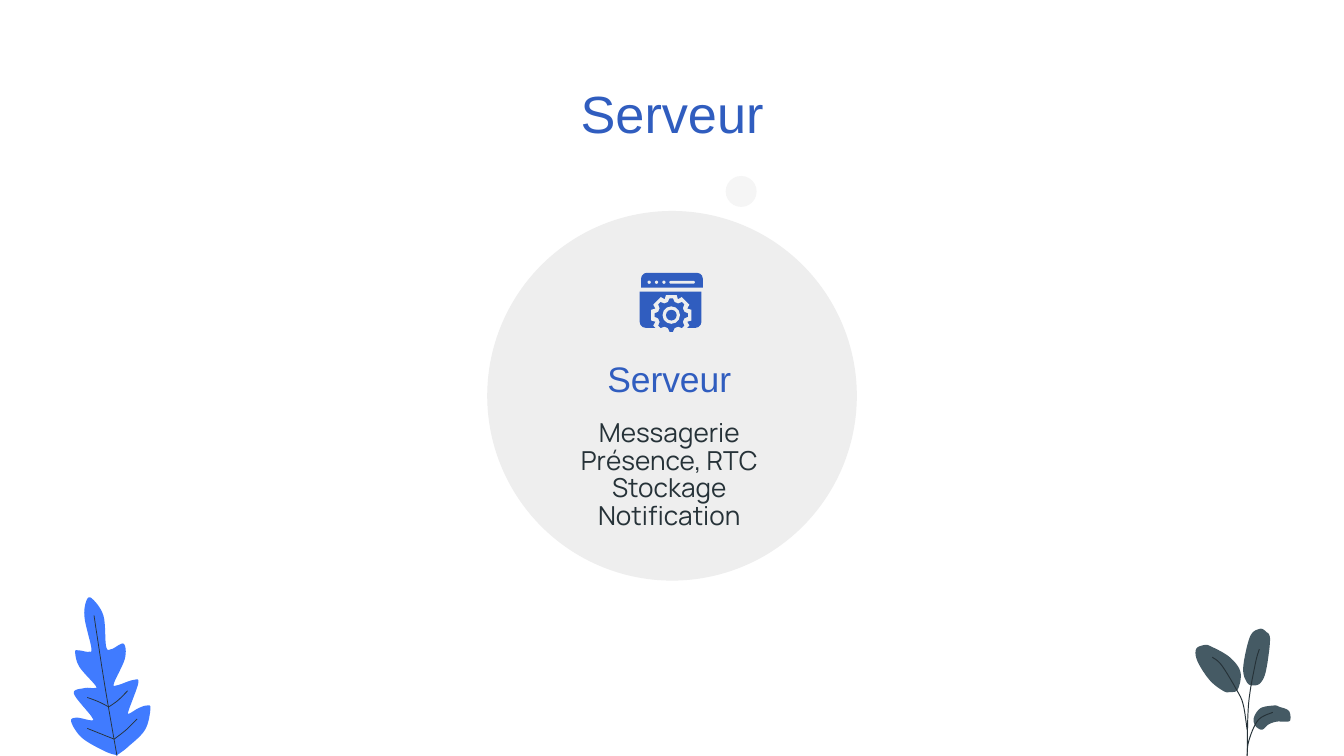
from math import cos, sin, tau

from pptx import Presentation
from pptx.dml.color import RGBColor
from pptx.enum.shapes import MSO_SHAPE
from pptx.enum.text import MSO_ANCHOR, PP_ALIGN
from pptx.util import Inches, Pt

WHITE = RGBColor(0xFF, 0xFF, 0xFF)
BLUE = RGBColor(0x30, 0x5D, 0xBF)
LEAF = RGBColor(0x40, 0x7B, 0xFF)
SLATE = RGBColor(0x45, 0x5A, 0x64)
DARK = RGBColor(0x26, 0x32, 0x38)
GREY = RGBColor(0xEE, 0xEE, 0xEE)
PALE = RGBColor(0xF5, 0xF5, 0xF5)

TITLE = {"name": "Arial", "size": Pt(28)}
HEAD = {"name": "Arial", "size": Pt(19)}
BODY = {"name": "Manrope", "size": Pt(14)}

OAK = [
    (6.8, 44.5), (7.7, 45.8), (7.9, 48.1), (8.3, 48.3), (9.2, 47.9), (9.3, 49),
    (8.5, 50.8), (8.7, 51), (9.9, 50.6), (10.3, 50.8), (9.6, 52.8), (9.6, 53.1),
    (10.3, 52.7), (10.9, 52.5), (11.2, 52.7), (10.8, 54.3), (9.5, 55.6),
    (8.7, 56.2), (8.7, 56.2), (7.8, 55.9), (6.1, 54.9), (5.3, 53.7), (5.7, 53.4),
    (6.8, 53.6), (6.8, 53.3), (5.5, 51.6), (6.3, 51.2), (7, 51.2), (7.1, 51),
    (5.9, 49.6), (5.6, 48.5), (5.9, 48.4), (6.6, 48.5), (6.8, 48.2), (6.3, 46),
    (6.4, 44.8),
]
BUDS = [
    [(94.8, 52.5), (93.8, 52.7), (93.3, 53.4), (93.4, 54), (93.9, 54.3),
     (94.4, 53.9), (95, 53.7), (95.6, 53.7), (96, 53.6), (95.9, 52.9), (95.2, 52.6)],
    [(93.7, 46.8), (93, 47.4), (92.5, 49.7), (92.8, 50.8), (93.3, 51),
     (93.8, 50.8), (94.2, 49.9), (94.5, 47.6), (94.2, 47)],
    [(89.6, 48), (89, 48.3), (89.1, 49.2), (90, 50.6), (91, 51.4), (91.5, 51.5),
     (92.1, 51.3), (92.3, 50), (91.5, 48.9), (90.1, 48.1)],
]
VEINS = [
    [(7, 45.8), (7.8, 51), (8.7, 56.2)],
    [(9.5, 51.4), (8.8, 52.1), (8.1, 52.6)],
    [(6.5, 51.9), (7.3, 52.2), (8.1, 52.6)],
    [(6.5, 54.2), (7.5, 54.6), (8.5, 55)],
    [(10.2, 53.5), (9.4, 54.3), (8.5, 55)],
]
STEMS = [
    [(94.7, 53), (93.6, 53.6), (92.9, 55.2), (92.8, 56.5)],
    [(93.7, 48.3), (93.4, 49.4), (92.9, 52.4), (92.8, 56.2)],
    [(90.2, 48.9), (90.9, 49.5), (92, 51.3), (92.5, 52.4), (92.8, 54.3)],
]


def smooth(pts, loop):
    """Return points of a soft curve through the given knots."""
    n = len(pts)
    spans = n if loop else n - 1

    def knot(i):
        return pts[i % n if loop else min(max(i, 0), n - 1)]

    def mix(a, b, c, d, t):
        return b + t / 2 * (c - a + t * (2*a - 5*b + 4*c - d + t * (3*b - 3*c + d - a)))

    return [
        tuple(mix(*axis, step / 8) for axis in zip(*(knot(i + k) for k in (-1, 0, 1, 2))))
        for i in range(spans) for step in range(8)
    ] + ([] if loop else [pts[-1]])


def cog(x, y, tip, root, half):
    """Return the outline of a gear with eight teeth."""
    rim = ((root, -half - 0.15), (tip, -half), (tip, half), (root, half + 0.15))
    return [
        (x + r * cos(k * tau / 8 + a), y + r * sin(k * tau / 8 + a))
        for k in range(8) for r, a in rim
    ]


class Sheet:
    """Draw on one slide with a grid of 100 columns of square cells."""

    def __init__(self):
        self.deck = Presentation()
        self.deck.slide_width = Inches(10)
        self.deck.slide_height = Inches(10) * 9 // 16
        self.cell = self.deck.slide_width // 100
        self.slide = self.deck.slides.add_slide(self.deck.slide_layouts[6])
        self.slide.background.fill.solid()
        self.slide.background.fill.fore_color.rgb = WHITE

    def grid(self, *cells):
        return [round(c * self.cell) for c in cells]

    def paint(self, shape, tint):
        shape.shadow.inherit = False
        shape.fill.solid()
        shape.fill.fore_color.rgb = tint
        shape.line.fill.background()

    def form(self, kind, box, tint, *bends):
        shape = self.slide.shapes.add_shape(kind, *self.grid(*box))
        self.paint(shape, tint)
        for i, bend in enumerate(bends):
            shape.adjustments[i] = bend

    def disc(self, x, y, r, tint):
        self.form(MSO_SHAPE.OVAL, (x - r, y - r, 2 * r, 2 * r), tint)

    def trace(self, pts, loop):
        first, *rest = [self.grid(*p) for p in pts]
        pen = self.slide.shapes.build_freeform(*first)
        pen.add_line_segments(rest, close=loop)
        return pen.convert_to_shape()

    def patch(self, pts, tint):
        self.paint(self.trace(pts, True), tint)

    def stroke(self, pts, tint, width):
        shape = self.trace(smooth(pts, False), False)
        shape.shadow.inherit = False
        shape.fill.background()
        shape.line.color.rgb = tint
        shape.line.width = Pt(width)

    def text(self, words, box, style, tint, anchor, space):
        frame = self.slide.shapes.add_textbox(*self.grid(*box)).text_frame
        form = {"word_wrap": True, "vertical_anchor": anchor, "text": words}
        edges = ("left", "top", "right", "bottom")
        form |= {f"margin_{edge}": Inches(0.1) for edge in edges}
        for key, val in form.items():
            setattr(frame, key, val)
        for para in frame.paragraphs:
            para.alignment = PP_ALIGN.CENTER
            para.line_spacing = space
            font = para.runs[0].font
            font.color.rgb = tint
            for key, val in style.items():
                setattr(font, key, val)


def main():
    sheet = Sheet()
    sheet.text("Serveur", (3.4, 4.9, 93.2, 6.3), TITLE, BLUE, MSO_ANCHOR.MIDDLE, 1.15)

    sheet.patch(smooth(OAK, True), LEAF)
    for vein in VEINS:
        sheet.stroke(vein, DARK, 0.4)
    for bud in BUDS:
        sheet.patch(smooth(bud, True), SLATE)
    for stem in STEMS:
        sheet.stroke(stem, DARK, 0.5)

    sheet.disc(55.15, 14.25, 1.15, PALE)
    sheet.disc(50, 29.45, 13.75, GREY)
    sheet.text("Messagerie\nPrésence, RTC\nStockage\nNotification",
               (38.2, 30.3, 23.2, 6.9), BODY, DARK, MSO_ANCHOR.TOP, 0.88)
    sheet.text("Serveur", (40, 25.3, 19.6, 5.2), HEAD, BLUE, MSO_ANCHOR.MIDDLE, 1.15)

    sheet.form(MSO_SHAPE.ROUND_2_SAME_RECTANGLE, (47.7, 20.3, 4.6, 1.1), BLUE, 0.4, 0)
    for k in range(3):
        sheet.disc(48.3 + 0.55 * k, 21, 0.12, GREY)
    sheet.form(MSO_SHAPE.ROUNDED_RECTANGLE, (49.8, 20.9, 1.9, 0.2), GREY, 0.5)
    sheet.form(MSO_SHAPE.ROUND_2_SAME_RECTANGLE, (47.6, 21.7, 4.6, 2.7), BLUE, 0, 0.17)
    sheet.patch(cog(49.95, 23.45, 1.55, 1.25, 0.26), GREY)
    sheet.patch(cog(49.95, 23.45, 1.25, 1, 0.1), BLUE)
    for size, tint in ((0.65, GREY), (0.4, BLUE)):
        sheet.disc(49.95, 23.45, size, tint)

    sheet.deck.save("out.pptx")


if __name__ == "__main__":
    main()
